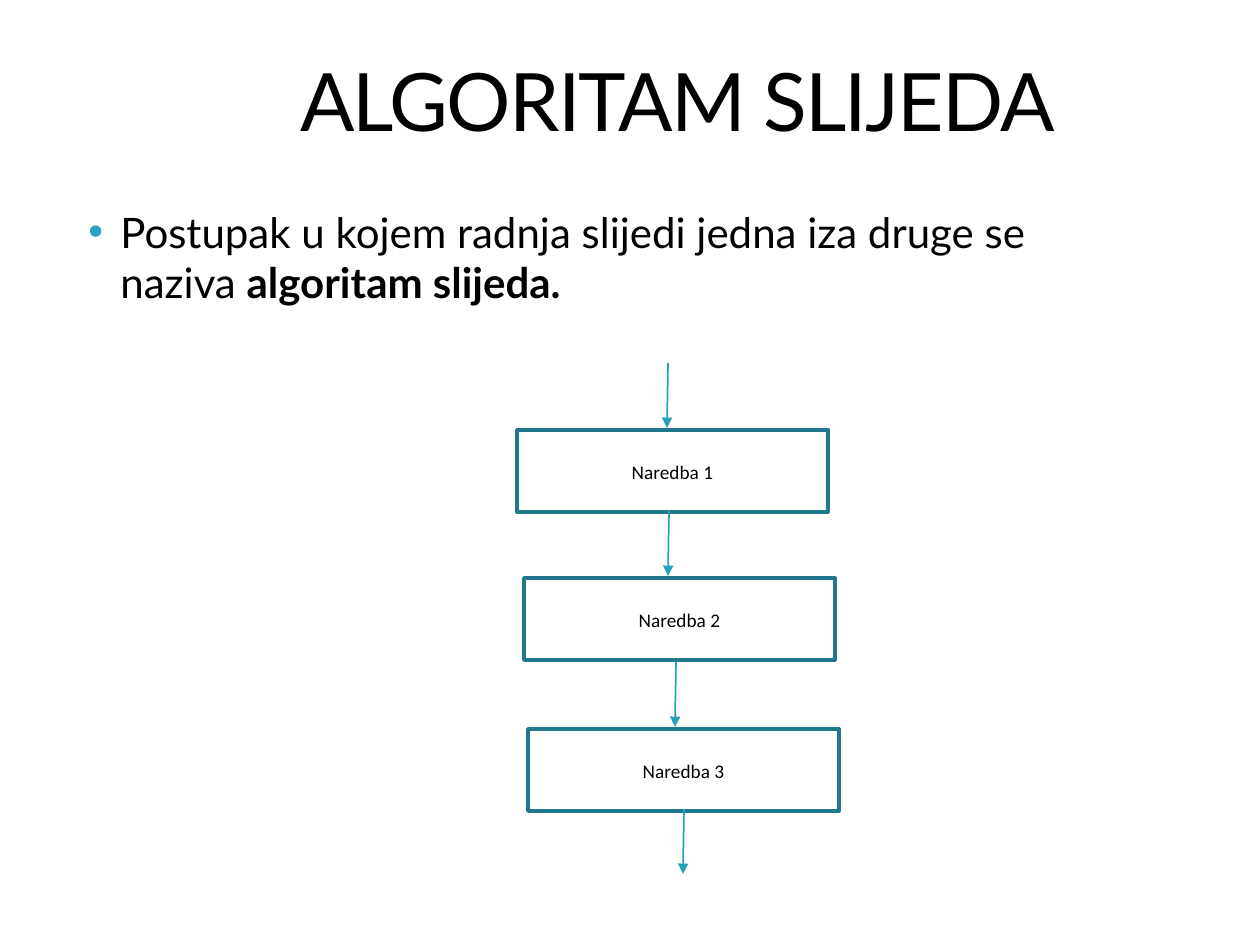
"""Build a slide that explains the sequence algorithm with a three-step flow."""
from lxml.etree import SubElement
from pptx import Presentation
from pptx.dml.color import RGBColor
from pptx.enum.shapes import MSO_CONNECTOR as CONNECTOR, MSO_SHAPE as SHAPE
from pptx.enum.text import MSO_ANCHOR as ANCHOR, PP_ALIGN as ALIGN
from pptx.oxml.ns import qn
from pptx.util import Emu, Pt

BLACK = RGBColor(0, 0, 0)
BULLET_BLUE = RGBColor(0x2D, 0xA2, 0xBF)
ARROW_BLUE = RGBColor(0x28, 0xA1, 0xBE)
BORDER_BLUE = RGBColor(0x21, 0x78, 0x8D)


def px(n):
    return Emu(round(n * 914400 / 126))


def write(shape, *texts, font, size, align=ALIGN.LEFT, anchor=ANCHOR.TOP,
          line_spacing=None, space_after=0, tracking=0, bold_last=False):
    frame = shape.text_frame
    frame.word_wrap = True
    frame.vertical_anchor = anchor
    paragraph = frame.paragraphs[0]
    paragraph.alignment = align
    paragraph.line_spacing = line_spacing
    paragraph.space_after = Pt(space_after)
    for text in texts:
        run = paragraph.add_run()
        run.text = text
        run.font.name = font
        run.font.size = Pt(size)
        run.font.color.rgb = BLACK
        run.font.bold = bold_last and text == texts[-1]
        if tracking:
            run.font._element.set("spc", str(tracking * 100))
    return paragraph


deck = Presentation()
deck.slide_width, deck.slide_height = px(1260), px(945)
slide = deck.slides.add_slide(deck.slide_layouts[6])
shapes = slide.shapes

title = shapes.add_textbox(px(125), px(45), px(1105), px(108))
write(title, "ALGORITAM SLIJEDA", font="Lato", size=46,
      align=ALIGN.CENTER, anchor=ANCHOR.MIDDLE, tracking=-1)

definition = shapes.add_textbox(px(60), px(200), px(1101), px(193))
sentence = write(definition, "Postupak u kojem radnja slijedi jedna iza druge se naziva ",
                 "algoritam slijeda.", font="Lato", size=24, bold_last=True)
bullet_format = sentence._p.get_or_add_pPr()
bullet_format.set("marL", str(px(48)))
bullet_format.set("indent", str(px(-32)))
bullet_color = SubElement(bullet_format, qn("a:buClr"))
SubElement(bullet_color, qn("a:srgbClr"), val=str(BULLET_BLUE))
SubElement(bullet_format, qn("a:buFont"), typeface="Arial")
SubElement(bullet_format, qn("a:buChar"), char="•")

for number, (left, top) in enumerate([(517, 430), (524, 578), (528, 729)], start=1):
    step = shapes.add_shape(SHAPE.RECTANGLE, px(left), px(top), px(311), px(82))
    step.shadow.inherit = False
    step.fill.background()
    step.line.color.rgb = BORDER_BLUE
    step.line.width = Pt(2)
    write(step, f"Naredba {number}", font="Calibri", size=11, align=ALIGN.CENTER,
          anchor=ANCHOR.MIDDLE, line_spacing=1.07, space_after=8)

for x, y in [(668, 363), (669, 511), (676, 662), (684, 809)]:
    arrow = shapes.add_connector(CONNECTOR.STRAIGHT, px(x), px(y), px(x - 1), px(y + 65))
    arrow.line.color.rgb = ARROW_BLUE
    arrow.line.width = Pt(1)
    SubElement(arrow.line._get_or_add_ln(), qn("a:tailEnd"), type="triangle")
    SubElement(arrow._element.spPr, qn("a:effectLst"))

deck.save("out.pptx")
